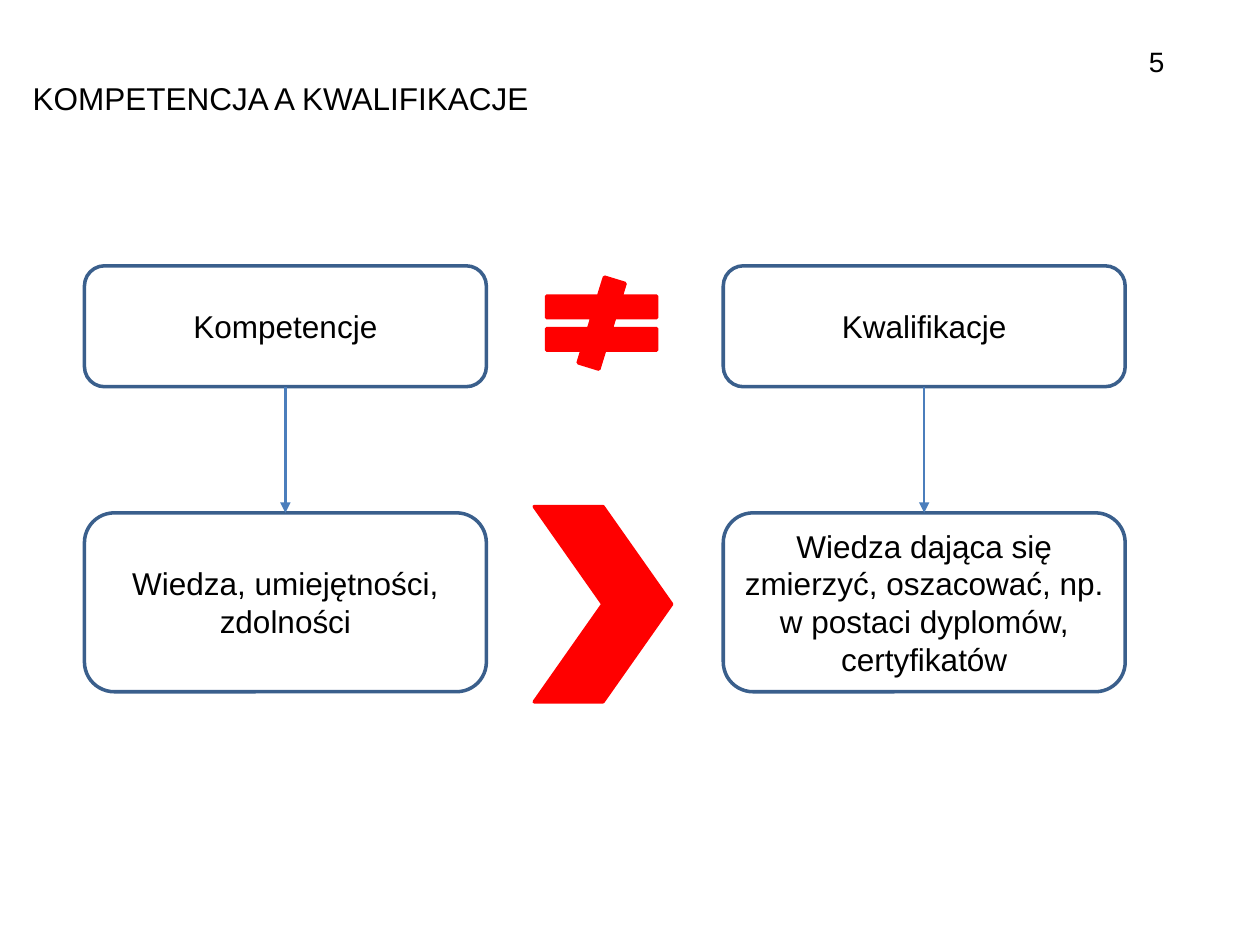
from dataclasses import dataclass

from lxml.etree import SubElement
from pptx import Presentation
from pptx.dml.color import RGBColor
from pptx.enum.shapes import MSO_CONNECTOR as Connector, MSO_SHAPE as Shape
from pptx.enum.text import MSO_ANCHOR as Anchor, MSO_AUTO_SIZE as AutoSize, PP_ALIGN as Align
from pptx.oxml.ns import qn
from pptx.util import Inches, Pt


@dataclass(frozen=True)
class Theme:
    font: str = "Arial"
    text: RGBColor = RGBColor(0x00, 0x00, 0x00)
    outline: RGBColor = RGBColor(0x3A, 0x5F, 0x8C)
    arrow: RGBColor = RGBColor(0x4B, 0x7E, 0xBC)
    sign: RGBColor = RGBColor(0xFF, 0x00, 0x00)
    body_size: Pt = Pt(18)
    number_size: Pt = Pt(16)
    outline_width: Pt = Pt(2)
    arrow_width: Pt = Pt(1.5)


THEME = Theme()

BOX_WIDTH = 3.19
TOP_ROW = (2.11, 0.96)  # top, height
BOTTOM_ROW = (4.07, 1.42)
COLUMNS = [
    (0.67, "Kompetencje", "Wiedza, umiejętności, zdolności"),
    (5.74, "Kwalifikacje",
     "Wiedza dająca się zmierzyć, oszacować, np. w postaci dyplomów, certyfikatów"),
]


def write_text(frame, text, size, align, anchor):
    frame.word_wrap = True
    frame.auto_size = AutoSize.NONE
    frame.vertical_anchor = anchor
    frame.text = text
    paragraph = frame.paragraphs[0]
    paragraph.alignment = align
    paragraph.font.name = THEME.font
    paragraph.font.size = size
    paragraph.font.color.rgb = THEME.text


def add_title(slide, text):
    title = slide.shapes.title
    title.left, title.top = Inches(0.16), Inches(0.58)
    title.width, title.height = Inches(8.12), Inches(0.73)
    write_text(title.text_frame, text, THEME.body_size, Align.LEFT, Anchor.TOP)


def add_page_number(slide, number):
    box = slide.shapes.add_textbox(Inches(7), Inches(0.23), Inches(2.34), Inches(0.52))
    write_text(box.text_frame, number, THEME.number_size, Align.RIGHT, Anchor.MIDDLE)


def add_outlined_shape(slide, kind, left, top, width, height, color):
    shape = slide.shapes.add_shape(
        kind, Inches(left), Inches(top), Inches(width), Inches(height))
    shape.shadow.inherit = False
    shape.line.color.rgb = color
    shape.line.width = THEME.outline_width
    return shape


def add_box(slide, left, row, text):
    top, height = row
    box = add_outlined_shape(
        slide, Shape.ROUNDED_RECTANGLE, left, top, BOX_WIDTH, height, THEME.outline)
    box.fill.background()
    write_text(box.text_frame, text, THEME.body_size, Align.CENTER, Anchor.MIDDLE)
    return box


def add_sign(slide, kind, left, top, width, height):
    sign = add_outlined_shape(slide, kind, left, top, width, height, THEME.sign)
    sign.fill.solid()
    sign.fill.fore_color.rgb = THEME.sign
    return sign


def add_arrow(slide, upper, lower):
    arrow = slide.shapes.add_connector(Connector.STRAIGHT, 0, 0, 0, 0)
    arrow.begin_connect(upper, 2)
    arrow.end_connect(lower, 0)
    arrow.line.color.rgb = THEME.arrow
    arrow.line.width = THEME.arrow_width
    properties = arrow.element.spPr
    SubElement(properties.find(qn("a:ln")), qn("a:tailEnd"), type="triangle")
    SubElement(properties, qn("a:effectLst"))


def main():
    presentation = Presentation()
    presentation.slide_width, presentation.slide_height = Inches(10), Inches(7.5)
    slide = presentation.slides.add_slide(presentation.slide_layouts[5])

    # Heading
    add_title(slide, "KOMPETENCJA A KWALIFIKACJE")
    add_page_number(slide, "5")

    # Each term with its meaning below
    for left, term, meaning in COLUMNS:
        upper = add_box(slide, left, TOP_ROW, term)
        lower = add_box(slide, left, BOTTOM_ROW, meaning)
        add_arrow(slide, upper, lower)

    # Comparison signs between the columns
    not_equal = add_sign(slide, Shape.MATH_NOT_EQUAL, 4.18, 2.2, 1.19, 0.73)
    not_equal.adjustments[1] = 64.24  # slant of the stroke
    add_sign(slide, Shape.CHEVRON, 4.24, 4.02, 1.09, 1.55)

    presentation.save("out.pptx")


if __name__ == "__main__":
    main()
